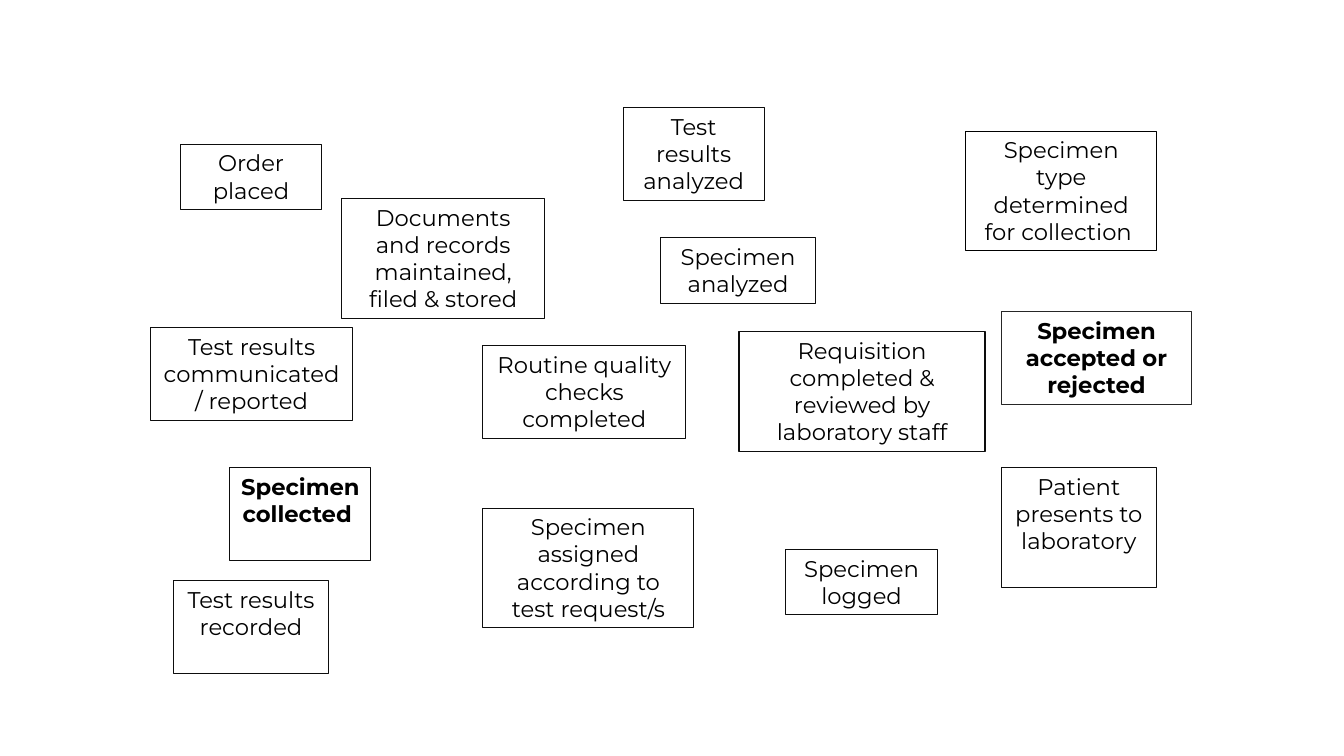
from dataclasses import dataclass

from pptx import Presentation
from pptx.dml.color import RGBColor
from pptx.enum.text import MSO_ANCHOR, MSO_AUTO_SIZE, PP_ALIGN
from pptx.slide import Slide
from pptx.text.text import TextFrame
from pptx.util import Emu, Pt

EMU_PER_PX = 9144  # 100 px to the inch
BLANK_LAYOUT = 6


@dataclass(frozen=True)
class Theme:
    font: str = "Montserrat"
    text_size: float = 16.2
    line_width: float = 0.75
    text: str = "000000"
    border: str = "0D0D0D"
    border_black: str = "000000"
    border_soft: str = "262626"


THEME = Theme()


@dataclass(frozen=True)
class Step:
    text: str
    left: int
    top: int
    width: int
    lines: int
    bold: bool = False
    border: str = THEME.border

    @property
    def height(self) -> int:
        return 11 + 27 * self.lines


STEPS = [
    Step("Order placed", 179, 143, 140, 2),
    Step("Patient presents to laboratory", 993, 464, 154, 4),
    Step("Requisition completed & reviewed by laboratory staff", 733, 329, 244, 4),
    Step("Specimen type determined for collection ", 958, 130, 189, 4,
         border=THEME.border_black),
    Step("Specimen logged", 779, 545, 151, 2),
    Step("Specimen accepted or rejected", 993, 309, 189, 3, bold=True,
         border=THEME.border_soft),
    Step("Specimen assigned according to test request/s", 479, 504, 209, 4),
    Step("Routine quality checks completed", 479, 343, 201, 3),
    Step("Specimen analyzed", 655, 236, 154, 2),
    Step("Test results analyzed", 618, 107, 140, 3),
    Step("Test results recorded", 172, 576, 154, 3),
    Step("Test results communicated/ reported", 149, 325, 201, 3),
    Step("Documents and records maintained, filed & stored", 339, 197, 201, 4),
    Step("Specimen collected ", 228, 464, 140, 3, bold=True),
]


def px(length: int) -> Emu:
    return Emu(length * EMU_PER_PX)


def write_text(frame: TextFrame, text: str, *, bold: bool = False,
               size: float = THEME.text_size, color: str = THEME.text,
               align: PP_ALIGN = PP_ALIGN.CENTER) -> None:
    frame.word_wrap = True
    frame.auto_size = MSO_AUTO_SIZE.NONE
    frame.vertical_anchor = MSO_ANCHOR.TOP
    paragraph = frame.paragraphs[0]
    paragraph.alignment = align
    run = paragraph.add_run()
    run.text = text
    run.font.name = THEME.font
    run.font.size = Pt(size)
    run.font.bold = bold
    run.font.color.rgb = RGBColor.from_string(color)


def draw_step(slide: Slide, step: Step) -> None:
    card = slide.shapes.add_textbox(
        px(step.left), px(step.top), px(step.width), px(step.height))
    card.line.color.rgb = RGBColor.from_string(step.border)
    card.line.width = Pt(THEME.line_width)
    write_text(card.text_frame, step.text, bold=step.bold)


def main() -> None:
    deck = Presentation()
    deck.slide_width, deck.slide_height = px(1333), px(750)
    slide = deck.slides.add_slide(deck.slide_layouts[BLANK_LAYOUT])
    for step in STEPS:
        draw_step(slide, step)
    deck.save("out.pptx")


if __name__ == "__main__":
    main()
